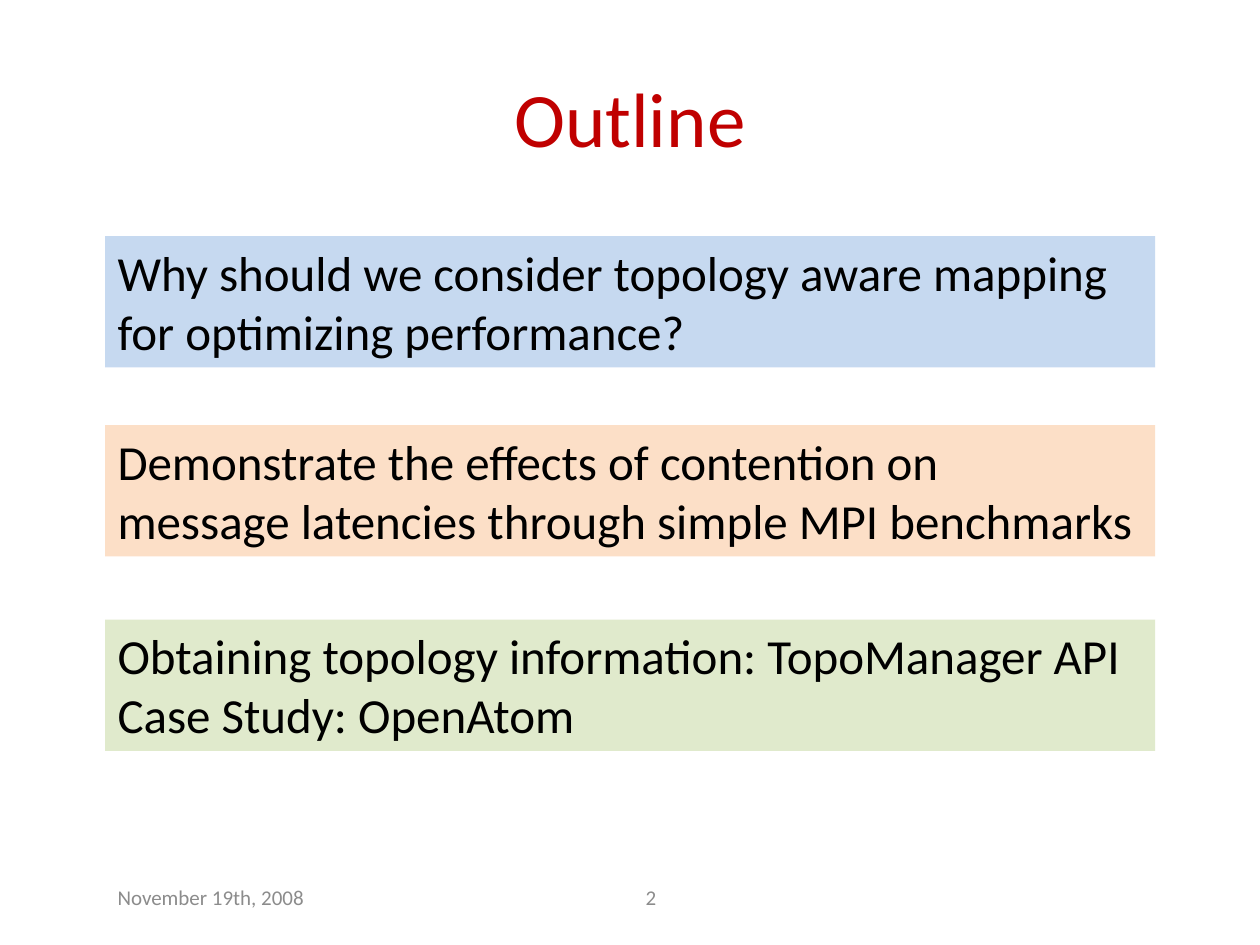
from lxml import etree
from pptx import Presentation
from pptx.dml.color import RGBColor
from pptx.enum import shapes, text
from pptx.oxml.ns import qn
from pptx.util import Cm, Pt

FONT = "Calibri"
RED = RGBColor(0xC0, 0x00, 0x00)
GRAY = RGBColor(0x8C, 0x8C, 0x8C)
BLACK = RGBColor(0x00, 0x00, 0x00)
BLUE = RGBColor(0x8E, 0xB4, 0xE3)
ORANGE = RGBColor(0xFA, 0xC0, 0x90)
GREEN = RGBColor(0xC3, 0xD6, 0x9B)

LEFT, TOPIC_WIDTH, TOPIC_HEIGHT = Cm(2.12), Cm(21.17), Cm(2.65)
FOOTER_TOP, FOOTER_WIDTH, FOOTER_HEIGHT = Cm(17.58), Cm(5.93), Cm(1.02)

# Top, fill, hanging indent and lines of each topic
TOPICS = [
    (Cm(4.76), BLUE, Cm(1.43),
     ["Why should we consider topology aware mapping",
      "for optimizing performance?"]),
    (Cm(8.57), ORANGE, Cm(1.27),
     ["Demonstrate the effects of contention on",
      "message latencies through simple MPI benchmarks"]),
    (Cm(12.49), GREEN, Cm(1.27),
     ["Obtaining topology information: TopoManager API",
      "Case Study: OpenAtom"]),
]


def style(p, size, color, align):
    p.alignment = align
    p.font.name = FONT
    p.font.size = Pt(size)
    p.font.color.rgb = color


def add_label(slide, box, words, size, color, align=text.PP_ALIGN.LEFT):
    tf = slide.shapes.add_textbox(*box).text_frame
    tf.word_wrap = True
    tf.vertical_anchor = text.MSO_ANCHOR.MIDDLE
    p = tf.paragraphs[0]
    p.text = words
    style(p, size, color, align)


def add_topic(slide, top, color, indent, lines):
    sp = slide.shapes.add_shape(shapes.MSO_SHAPE.RECTANGLE,
                                LEFT, top, TOPIC_WIDTH, TOPIC_HEIGHT)
    sp.shadow.inherit = False
    sp.line.fill.background()
    sp.fill.solid()
    sp.fill.fore_color.rgb = color
    # Half-transparent fill
    rgb = sp._element.spPr.find(f"{qn('a:solidFill')}/{qn('a:srgbClr')}")
    etree.SubElement(rgb, qn("a:alpha"), val="50000")

    tf = sp.text_frame
    tf.word_wrap = True
    tf.auto_size = text.MSO_AUTO_SIZE.SHAPE_TO_FIT_TEXT
    tf.vertical_anchor = text.MSO_ANCHOR.TOP
    for i, line in enumerate(lines):
        p = tf.add_paragraph() if i else tf.paragraphs[0]
        p.text = line
        pPr = p._p.get_or_add_pPr()
        pPr.set("marL", str(indent))
        pPr.set("indent", str(-indent))
        style(p, 28, BLACK, text.PP_ALIGN.LEFT)


def main():
    prs = Presentation()
    prs.slide_width, prs.slide_height = Cm(25.4), Cm(19.05)
    slide = prs.slides.add_slide(prs.slide_layouts[6])

    # Title
    add_label(slide, (Cm(1.27), Cm(0.76), Cm(22.86), Cm(3.18)),
              "Outline", 44, RED, text.PP_ALIGN.CENTER)

    # Footer: date and slide number
    add_label(slide, (LEFT, FOOTER_TOP, FOOTER_WIDTH, FOOTER_HEIGHT),
              "November 19th, 2008", 12, GRAY)
    add_label(slide, (Cm(10.16), FOOTER_TOP, FOOTER_WIDTH, FOOTER_HEIGHT),
              "2", 12, GRAY, text.PP_ALIGN.CENTER)

    # Topics
    for topic in TOPICS:
        add_topic(slide, *topic)

    prs.save("out.pptx")


if __name__ == "__main__":
    main()
